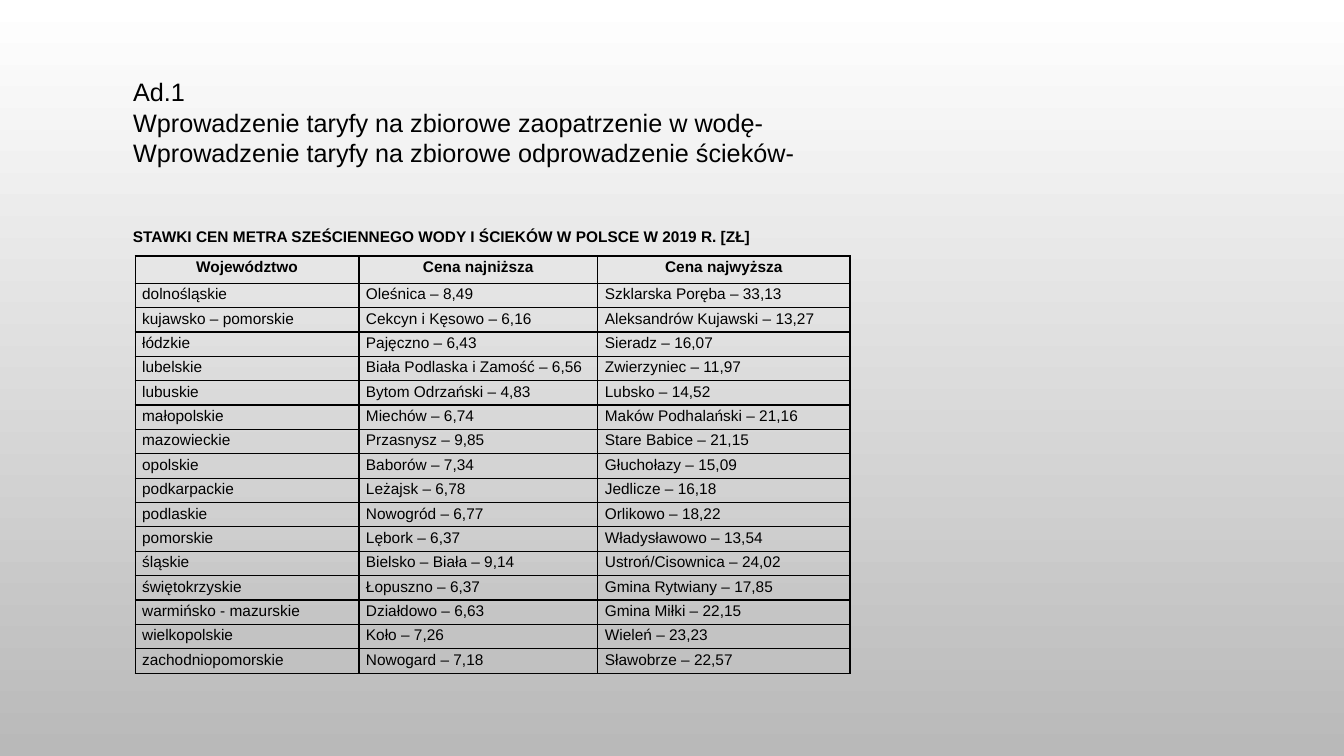
from pptx import Presentation
from pptx.dml.color import RGBColor
from pptx.enum.text import MSO_ANCHOR as Anchor, MSO_AUTO_SIZE as AutoSize, PP_ALIGN as Align
from pptx.oxml import parse_xml
from pptx.oxml.ns import nsdecls
from pptx.util import Inches, Pt

BLACK = "000000"
TITLE_LINES = [
    "Ad.1",
    "Wprowadzenie taryfy na zbiorowe zaopatrzenie w wodę-",
    "Wprowadzenie taryfy na zbiorowe odprowadzenie ścieków-",
]
CAPTION = "STAWKI CEN METRA SZEŚCIENNEGO WODY I ŚCIEKÓW W POLSCE W 2019 R. [ZŁ]"
PRICES = [
    ("Województwo", "Cena najniższa", "Cena najwyższa"),
    ("dolnośląskie", "Oleśnica – 8,49", "Szklarska Poręba – 33,13"),
    ("kujawsko – pomorskie", "Cekcyn i Kęsowo – 6,16", "Aleksandrów Kujawski – 13,27"),
    ("łódzkie", "Pajęczno – 6,43", "Sieradz – 16,07"),
    ("lubelskie", "Biała Podlaska i Zamość – 6,56", "Zwierzyniec – 11,97"),
    ("lubuskie", "Bytom Odrzański – 4,83", "Lubsko – 14,52"),
    ("małopolskie", "Miechów – 6,74", "Maków Podhalański – 21,16"),
    ("mazowieckie", "Przasnysz – 9,85", "Stare Babice – 21,15"),
    ("opolskie", "Baborów – 7,34", "Głuchołazy – 15,09"),
    ("podkarpackie", "Leżajsk – 6,78", "Jedlicze – 16,18"),
    ("podlaskie", "Nowogród – 6,77", "Orlikowo – 18,22"),
    ("pomorskie", "Lębork – 6,37", "Władysławowo – 13,54"),
    ("śląskie", "Bielsko – Biała – 9,14", "Ustroń/Cisownica – 24,02"),
    ("świętokrzyskie", "Łopuszno – 6,37", "Gmina Rytwiany – 17,85"),
    ("warmińsko - mazurskie", "Działdowo – 6,63", "Gmina Miłki – 22,15"),
    ("wielkopolskie", "Koło – 7,26", "Wieleń – 23,23"),
    ("zachodniopomorskie", "Nowogard – 7,18", "Sławobrze – 22,57"),
]
COLUMN_WIDTHS = [2.22, 2.37, 2.5]
TABLE_HEIGHT, HEADER_HEIGHT = 4.14, 0.27


def rgb(color):
    return RGBColor.from_string(color)


def format_text(frame, size, bold, align=Align.LEFT, spacing=1.0):
    for paragraph in frame.paragraphs:
        paragraph.alignment = align
        paragraph.line_spacing = spacing
        font_format = {"name": "Arial", "size": Pt(size), "bold": bold}
        for attribute, value in font_format.items():
            setattr(paragraph.font, attribute, value)
        paragraph.font.color.rgb = rgb(BLACK)


presentation = Presentation()
presentation.slide_width = Inches(13.33)
presentation.slide_height = Inches(7.5)
slide = presentation.slides.add_slide(presentation.slide_layouts[5])

background = slide.background.fill
background.gradient()
background.gradient_angle = 270
for stop, position, color in zip(background.gradient_stops, (0, 1), ("FFFFFF", "B9B9B9")):
    stop.position = position
    stop.color.rgb = rgb(color)

# Title
title = slide.shapes.title
title.left, title.top, title.width, title.height = map(Inches, (1.22, 0.71, 8.42, 1.31))
title_frame = title.text_frame
title_frame.text = "\n".join(TITLE_LINES)
title_frame.word_wrap = True
title_frame.auto_size = AutoSize.NONE
title_frame.vertical_anchor = Anchor.TOP
format_text(title_frame, 18, False)

# Price table
table_frame = slide.shapes.add_table(
    len(PRICES), len(COLUMN_WIDTHS),
    Inches(1.34), Inches(2.54), Inches(sum(COLUMN_WIDTHS)), Inches(TABLE_HEIGHT))
table = table_frame.table
table.first_row = False
table.horz_banding = False
for column, width in zip(table.columns, COLUMN_WIDTHS):
    column.width = Inches(width)
for row in table.rows:
    row.height = Inches((TABLE_HEIGHT - HEADER_HEIGHT) / (len(PRICES) - 1))
table.rows[0].height = Inches(HEADER_HEIGHT)

cell_format = {
    "margin_left": Inches(0.07), "margin_right": Inches(0.07),
    "margin_top": 0, "margin_bottom": 0, "vertical_anchor": Anchor.TOP,
}
for row_index, values in enumerate(PRICES):
    is_header = row_index == 0
    for column_index, value in enumerate(values):
        cell = table.cell(row_index, column_index)
        cell.text = value
        for attribute, setting in cell_format.items():
            setattr(cell, attribute, setting)
        format_text(cell.text_frame, 11, is_header,
                    Align.CENTER if is_header else Align.LEFT, 1.15)
        properties = cell._tc.get_or_add_tcPr()
        for side in "LRTB":
            properties.append(parse_xml(
                f'<a:ln{side} {nsdecls("a")} w="{Pt(1)}"><a:solidFill>'
                f'<a:srgbClr val="{BLACK}"/></a:solidFill></a:ln{side}>'))
        cell.fill.background()

# Table caption
caption = slide.shapes.add_textbox(Inches(1.22), Inches(2.18), Inches(6.4), Inches(0.59))
caption_frame = caption.text_frame
caption_frame.text = CAPTION
caption_frame.margin_top = Inches(0.07)
caption_frame.vertical_anchor = Anchor.TOP
caption_frame.word_wrap = False
format_text(caption_frame, 11, True)

presentation.save("out.pptx")
